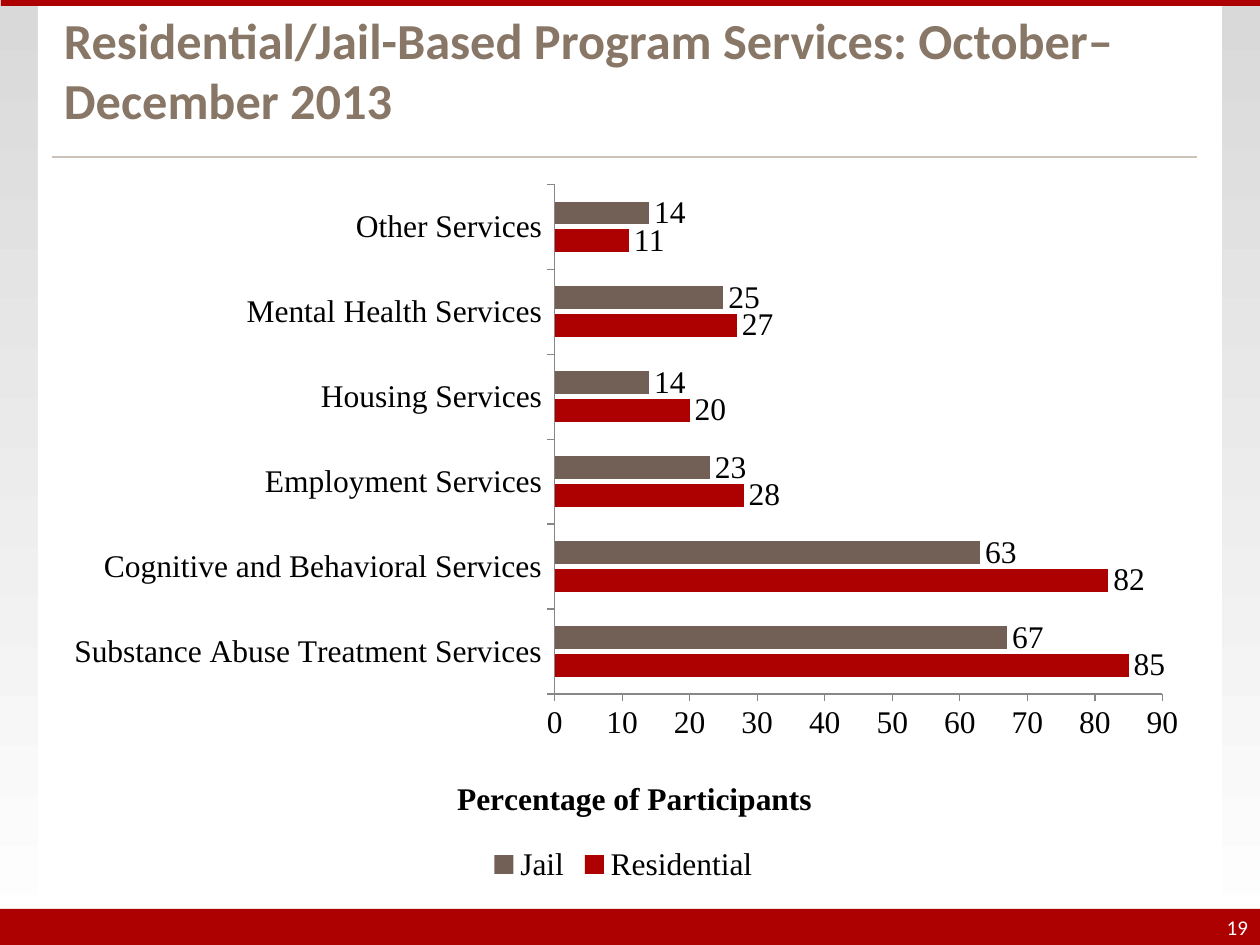
import pptx
import pptx.util
import pptx.dml.color
import pptx.chart.data
import pptx.enum.chart
import pptx.enum.shapes
import pptx.enum.text
import pptx.oxml
import pptx.oxml.ns

SCALE = 914400 / 126
HUES = {"red": "AD0101", "brown": "726056", "title": "887766", "rule": "CBC2B9",
        "white": "FFFFFF", "black": "000000", "gray": "D9D9D9", "axis": "878787"}


def px(*nums):
    return [pptx.util.Emu(round(n * SCALE)) for n in nums]


def hue(name):
    return pptx.dml.color.RGBColor.from_string(HUES[name])


deck = pptx.Presentation()
deck.slide_width, deck.slide_height = px(1260, 945)
slide = deck.slides.add_slide(deck.slide_layouts[5])
shapes = slide.shapes

back = slide.background.fill
back.gradient()
back.gradient_angle = 270
for stop, name in zip(back.gradient_stops, ["gray", "white"]):
    stop.color.rgb = hue(name)

panels = [((38, 6, 1184, 939), "white"), ((0, 909, 1260, 36), "red"), ((1, 0, 1259, 6), "red")]
for area, name in panels:
    panel = shapes.add_shape(pptx.enum.shapes.MSO_SHAPE.RECTANGLE, *px(*area))
    panel.shadow.inherit = False
    panel.fill.solid()
    panel.fill.fore_color.rgb = hue(name)
    panel.line.fill.background()

rule = shapes.add_connector(pptx.enum.shapes.MSO_CONNECTOR.STRAIGHT, *px(52, 157, 1197, 157))
rule.line.color.rgb = hue("rule")
rule.line.width = pptx.util.Pt(1.25)
rule._element.spPr.append(pptx.oxml.parse_xml("<a:effectLst %s/>" % pptx.oxml.ns.nsdecls("a")))

title = shapes.title
shapes._spTree.append(title._element)
title.left, title.top, title.width, title.height = px(52, 31, 1145, 105)
folio = shapes.add_textbox(*px(1182, 909, 78, 36))

align = pptx.enum.text.PP_ALIGN
anchor = pptx.enum.text.MSO_ANCHOR
texts = [
    (title, "Residential/Jail-Based Program Services: October–December 2013",
     28.8, "title", True, align.LEFT, anchor.BOTTOM),
    (folio, "19", 12, "white", False, align.RIGHT, anchor.MIDDLE),
]
for box, words, size, name, bold, side, place in texts:
    frame = box.text_frame
    frame.word_wrap = True
    frame.auto_size = pptx.enum.text.MSO_AUTO_SIZE.NONE
    frame.vertical_anchor = place
    frame.margin_left, frame.margin_right = px(12, 12)
    frame.margin_top, frame.margin_bottom = px(6, 6)
    para = frame.paragraphs[0]
    para.alignment = side
    run = para.add_run()
    run.text = words
    run.font.name = "Calibri"
    run.font.size = pptx.util.Pt(size)
    run.font.bold = bold
    run.font.color.rgb = hue(name)

data = pptx.chart.data.CategoryChartData(number_format="0")
data.categories = ["Substance Abuse Treatment Services", "Cognitive and Behavioral Services",
                   "Employment Services", "Housing Services", "Mental Health Services",
                   "Other Services"]
data.add_series("Residential", [85, 82, 28, 20, 27, 11])
data.add_series("Jail", [67, 63, 23, 14, 25, 14])
kind = pptx.enum.chart.XL_CHART_TYPE.BAR_CLUSTERED
chart = shapes.add_chart(kind, *px(50, 170, 1147, 718), data).chart
chart.has_title = False
chart.font.name = "Times New Roman"
chart.font.size = pptx.util.Pt(18)
chart.font.color.rgb = hue("black")
chart.has_legend = True
chart.legend.position = pptx.enum.chart.XL_LEGEND_POSITION.BOTTOM
chart.legend.include_in_layout = False

plot = chart.plots[0]
plot.gap_width = 150
plot.overlap = -20
plot.vary_by_categories = False
for series, name in zip(plot.series, ["red", "brown"]):
    series.format.fill.solid()
    series.format.fill.fore_color.rgb = hue(name)
    labels = series.data_labels
    labels.show_value = True
    labels.number_format = "0"
    labels.number_format_is_linked = False
    labels.position = pptx.enum.chart.XL_LABEL_POSITION.OUTSIDE_END

for axis in [chart.category_axis, chart.value_axis]:
    axis.has_major_gridlines = False
    axis.major_tick_mark = pptx.enum.chart.XL_TICK_MARK.OUTSIDE
    axis.minor_tick_mark = pptx.enum.chart.XL_TICK_MARK.NONE
    axis.format.line.color.rgb = hue("axis")

scale = chart.value_axis
scale.minimum_scale = 0
scale.maximum_scale = 90
scale.major_unit = 10
scale.tick_labels.number_format = "0"
scale.tick_labels.number_format_is_linked = False
run = scale.axis_title.text_frame.paragraphs[0].add_run()
run.text = "Percentage of Participants"
run.font.name = "Times New Roman"
run.font.size = pptx.util.Pt(18)
run.font.bold = True
run.font.color.rgb = hue("black")

area = chart._chartSpace.chart.plotArea
label = scale.axis_title._element
spots = [
    (area, 0, [("layoutTarget", "inner"), ("xMode", "edge"), ("yMode", "edge"),
               ("x", 0.44), ("y", 0.02), ("w", 0.53), ("h", 0.71)]),
    (label, 1, [("xMode", "edge"), ("yMode", "edge"), ("x", 0.35), ("y", 0.84)]),
]
for owner, index, marks in spots:
    for old in owner.findall(pptx.oxml.ns.qn("c:layout")):
        owner.remove(old)
    inner = "".join('<c:%s val="%s"/>' % mark for mark in marks)
    owner.insert(index, pptx.oxml.parse_xml(
        "<c:layout %s><c:manualLayout>%s</c:manualLayout></c:layout>"
        % (pptx.oxml.ns.nsdecls("c"), inner)))

deck.save("out.pptx")
